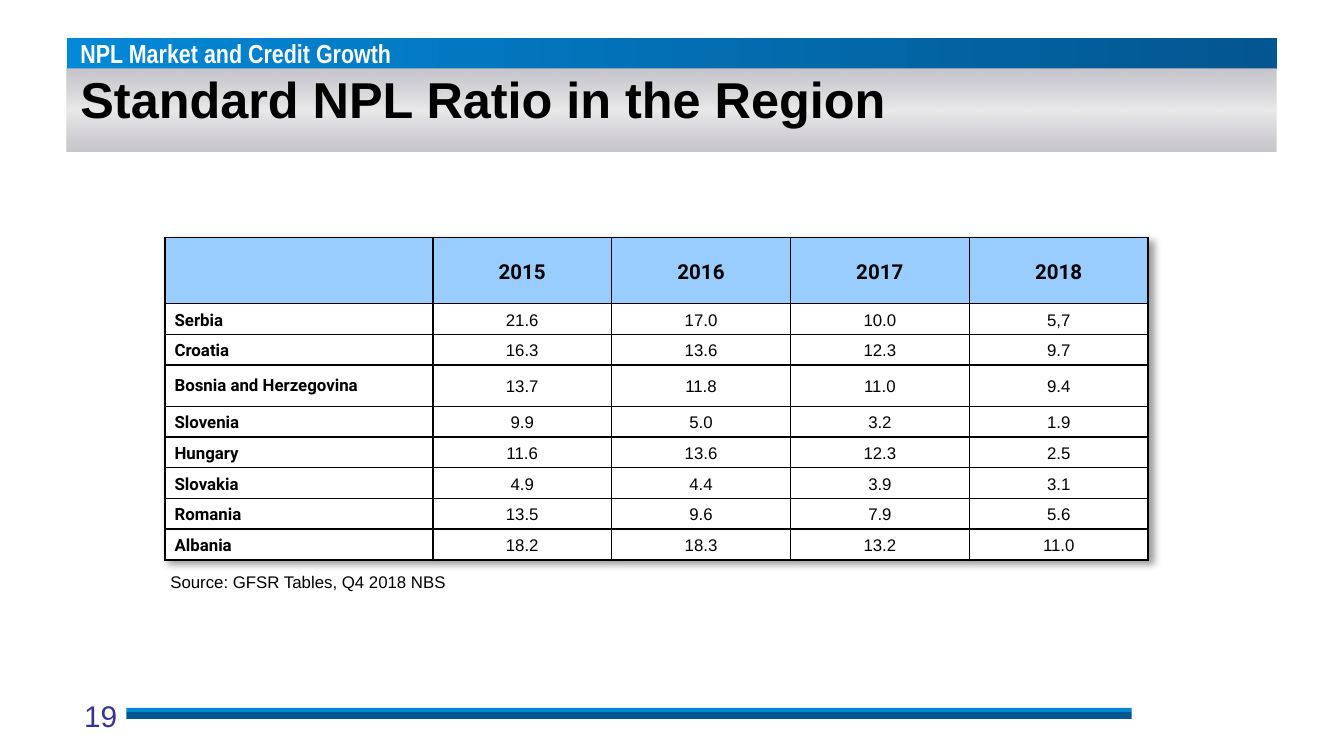
"""Build the slide with the standard NPL ratio table for the region."""
import lxml.etree
import pptx
import pptx.dml.color
import pptx.enum.shapes
import pptx.enum.text
import pptx.oxml
import pptx.oxml.ns
import pptx.util

Cm = pptx.util.Cm
Anchor = pptx.enum.text.MSO_ANCHOR
Align = pptx.enum.text.PP_ALIGN

SECTION = "NPL Market and Credit Growth"
TITLE = "Standard NPL Ratio in the Region"
SOURCE = "Source: GFSR Tables, Q4 2018 NBS"
PAGE_NUMBER = "19"
YEARS = ["2015", "2016", "2017", "2018"]
RATIOS = [
    ("Serbia", "21.6", "17.0", "10.0", "5,7"),
    ("Croatia", "16.3", "13.6", "12.3", "9.7"),
    ("Bosnia and Herzegovina", "13.7", "11.8", "11.0", "9.4"),
    ("Slovenia", "9.9", "5.0", "3.2", "1.9"),
    ("Hungary", "11.6", "13.6", "12.3", "2.5"),
    ("Slovakia", "4.9", "4.4", "3.9", "3.1"),
    ("Romania", "13.5", "9.6", "7.9", "5.6"),
    ("Albania", "18.2", "18.3", "13.2", "11.0"),
]
TALL_COUNTRY = "Bosnia and Herzegovina"


class Theme:
    """Colours and type styles as (font, size, bold, colour)."""

    bright, deep = "0388D7", "035690"
    silver, pale = "B9B7C0", "EAEAEA"
    header, body, border = "99CCFF", "FFFFFF", "000000"
    section_type = ("Arial Narrow", 14, True, "FFFFFF")
    title_type = ("Arial", 27, True, "000000")
    year_type = ("Roboto", 11, True, "000000")
    country_type = ("Roboto", 9, True, "000000")
    value_type = ("Arial", 9, False, "000000")
    number_type = ("Arial", 16, False, "333399")


def colour(code):
    """Return a colour object for a hex code."""
    return pptx.dml.color.RGBColor.from_string(code)


def element(markup):
    """Parse drawing markup whose root lacks its namespace."""
    name, rest = markup[1:].split(" ", 1)
    return pptx.oxml.parse_xml(f"<{name} {pptx.oxml.ns.nsdecls('a')} {rest}")


def write(frame, text, style, align=Align.LEFT, spacing=None):
    """Write one styled paragraph into a text frame."""
    para = frame.paragraphs[0]
    para.text = text
    para.alignment = align
    if spacing:
        para.line_spacing = spacing
    font = para.font
    font.name, size, font.bold, code = style
    font.size = pptx.util.Pt(size)
    font.color.rgb = colour(code)


def set_insets(target, left, top, right, bottom):
    """Set the four margins of a text frame or table cell."""
    target.margin_left, target.margin_top = Cm(left), Cm(top)
    target.margin_right, target.margin_bottom = Cm(right), Cm(bottom)


def add_bar(page, place, code):
    """Add a plain rectangle without outline or shadow."""
    bar = page.shapes.add_shape(
        pptx.enum.shapes.MSO_SHAPE.RECTANGLE, *map(Cm, place))
    bar.shadow.inherit = False
    bar.line.fill.background()
    bar.fill.solid()
    bar.fill.fore_color.rgb = colour(code)
    return bar


def add_gradient_bar(page, place, stops, angle):
    """Add a rectangle filled by (position, colour, opacity) stops."""
    bar = add_bar(page, place, stops[0][1])
    marks = "".join(
        f'<a:gs pos="{position * 1000}"><a:srgbClr val="{code}">'
        f'<a:alpha val="{opacity * 1000}"/></a:srgbClr></a:gs>'
        for position, code, opacity in stops)
    solid = bar._element.spPr.find(pptx.oxml.ns.qn("a:solidFill"))
    solid.getparent().replace(solid, element(
        f'<a:gradFill rotWithShape="1"><a:gsLst>{marks}</a:gsLst>'
        f'<a:lin ang="{angle * 60000}" scaled="0"/></a:gradFill>'))
    return bar


def add_label(page, place, text, style, align, anchor):
    """Add a text box with one paragraph."""
    box = page.shapes.add_textbox(*map(Cm, place))
    box.text_frame.word_wrap = True
    box.text_frame.vertical_anchor = anchor
    write(box.text_frame, text, style, align)


def format_cell(cell, fill):
    """Give a cell its margins, borders and fill."""
    cell.vertical_anchor = Anchor.MIDDLE
    set_insets(cell, 0.18, 0, 0.18, 0)
    properties = cell._tc.get_or_add_tcPr()
    for side in "LRTB":
        properties.append(element(
            f'<a:ln{side} w="12700"><a:solidFill><a:srgbClr val="{Theme.border}"/>'
            f'</a:solidFill></a:ln{side}>'))
    cell.fill.solid()
    cell.fill.fore_color.rgb = colour(fill)


def add_ratio_table(page):
    """Add the shadowed table of ratios by country and year."""
    rows = [("", *YEARS), *RATIOS]
    widths = [5.06] + [3.38] * len(YEARS)
    heights = [1.25] + [0.78 if row[0] == TALL_COUNTRY else 0.58 for row in RATIOS]
    table = page.shapes.add_table(
        len(rows), len(widths), Cm(3.12), Cm(4.49),
        Cm(sum(widths)), Cm(sum(heights))).table
    table.horz_banding = False
    table._tbl.tblPr.insert(0, element(
        '<a:effectLst ><a:outerShdw blurRad="50800" dist="38100" dir="2700000" '
        'algn="tl" rotWithShape="0"><a:srgbClr val="000000"><a:alpha val="40000"/>'
        '</a:srgbClr></a:outerShdw></a:effectLst>'))
    for column, width in zip(table.columns, widths):
        column.width = Cm(width)
    for row, height, texts in zip(table.rows, heights, rows):
        row.height = Cm(height)
        is_header = texts is rows[0]
        for index, (cell, text) in enumerate(zip(row.cells, texts)):
            format_cell(cell, Theme.header if is_header else Theme.body)
            style = Theme.value_type if index else Theme.country_type
            write(cell.text_frame, text, Theme.year_type if is_header else style,
                  Align.CENTER if index else Align.LEFT,
                  0.9 if text == TALL_COUNTRY else 1.15)


def main():
    """Assemble and save the deck."""
    deck = pptx.Presentation()
    deck.slide_width, deck.slide_height = Cm(25.4), Cm(14.29)
    page = deck.slides.add_slide(deck.slide_layouts[6])

    section = add_gradient_bar(
        page, (1.27, 0.71, 22.86, 0.6),
        [(0, Theme.bright, 100), (100, Theme.deep, 100)], 0)
    title = add_gradient_bar(
        page, (1.27, 1.3, 22.86, 1.57),
        [(0, Theme.silver, 79), (50, Theme.pale, 100), (100, Theme.silver, 79)], 90)
    set_insets(section.text_frame, 0.25, 0, 0.25, 0.13)
    section.text_frame.vertical_anchor = Anchor.TOP
    write(section.text_frame, SECTION, Theme.section_type)
    set_insets(title.text_frame, 0.25, 0, 0.25, 0.25)
    title.text_frame.vertical_anchor = Anchor.MIDDLE
    write(title.text_frame, TITLE, Theme.title_type, spacing=0.8)

    add_bar(page, (2.39, 13.46, 19, 0.13), Theme.deep)
    add_bar(page, (2.39, 13.38, 19, 0.08), Theme.bright)
    add_ratio_table(page)
    add_label(page, (1.09, 13.06, 1.63, 0.84), PAGE_NUMBER,
              Theme.number_type, Align.CENTER, Anchor.TOP)
    add_label(page, (2.97, 10.67, 16.41, 0.64), SOURCE,
              Theme.value_type, Align.LEFT, Anchor.MIDDLE)
    deck.save("out.pptx")


if __name__ == "__main__":
    main()
